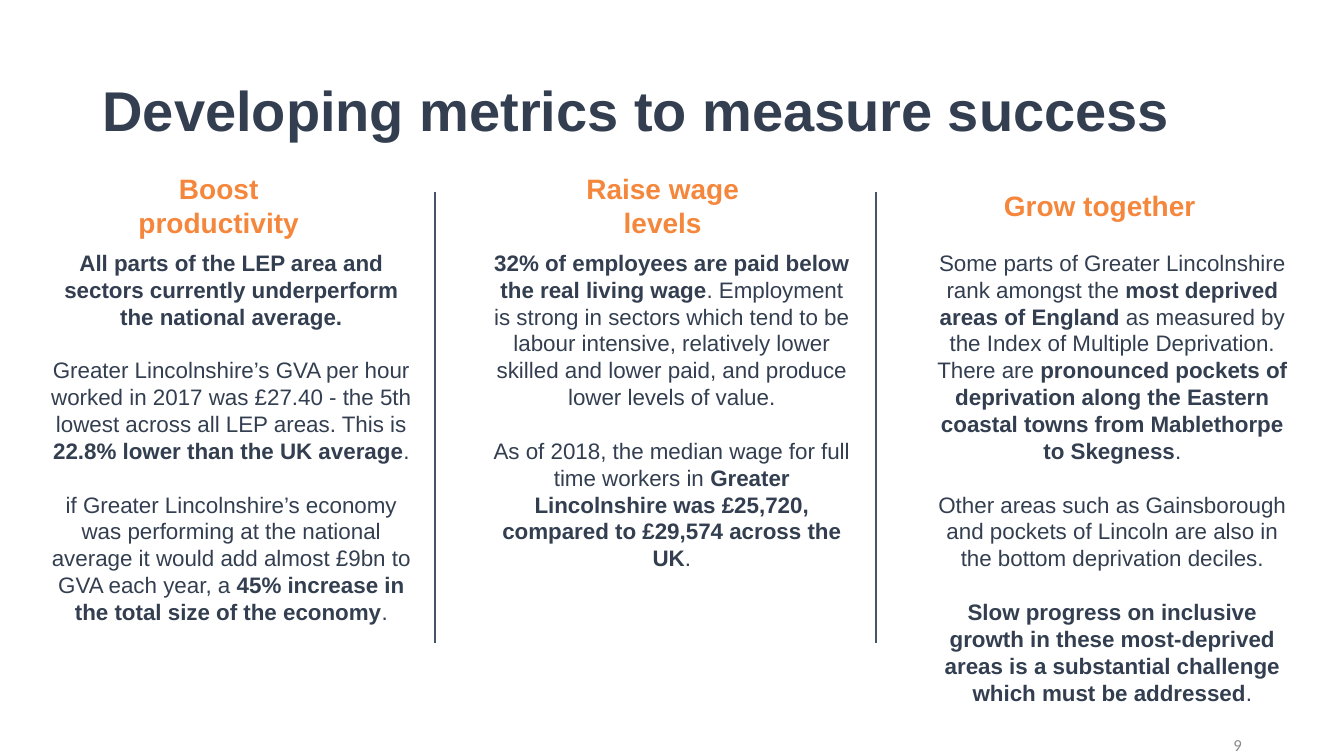
"""Build a slide with three columns of success metrics."""
from dataclasses import dataclass

from lxml import etree
from pptx import Presentation, util as u
from pptx.dml.color import RGBColor
from pptx.enum import shapes, text
from pptx.oxml import ns

NAVY = RGBColor(0x33, 0x3F, 0x50)
ORANGE = RGBColor(0xF5, 0x87, 0x3D)
SLATE = RGBColor(0x44, 0x54, 0x6A)
GREY = RGBColor(0x8C, 0x8C, 0x8C)

COLUMN_PITCH = 314.64
BODY_LEFT, BODY_TOP, BODY_WIDTH, BODY_HEIGHT = 29.52, 174.24, 271.44, 84.96
HEADING_TOP, HEADING_HEIGHT = 123.12, 47.52
DIVIDER_LEFT, DIVIDER_TOP, DIVIDER_BOTTOM = 311.04, 136.8, 459.36
BODY_LINE = 19.2


@dataclass
class Run:
    text: str
    bold: bool = False


@dataclass
class Style:
    size: float
    color: RGBColor
    name: str = "Arial"
    alignment: text.PP_ALIGN = text.PP_ALIGN.CENTER
    anchor: text.MSO_ANCHOR = text.MSO_ANCHOR.MIDDLE
    line_spacing: float | u.Length | None = None
    gap: float = 0


@dataclass
class Column:
    heading: str
    heading_left: float
    heading_width: float
    paragraphs: list[list[Run]]


TITLE = Style(40, NAVY, alignment=text.PP_ALIGN.LEFT, line_spacing=0.9)
HEADING = Style(20, ORANGE)
BODY = Style(16, NAVY, anchor=text.MSO_ANCHOR.TOP,
             line_spacing=u.Pt(BODY_LINE), gap=BODY_LINE)
NUMBER = Style(12, GREY, "Calibri", text.PP_ALIGN.RIGHT)

COLUMNS = [
    Column("Boost productivity", 77.04, 158.4, [
        [Run("All parts of the LEP area and sectors currently underperform "
             "the national average.", True)],
        [Run("Greater Lincolnshire’s GVA per hour worked in 2017 was £27.40 - "
             "the 5th lowest across all LEP areas. This is "),
         Run("22.8% lower than the UK average", True), Run(".")],
        [Run("if Greater Lincolnshire’s economy was performing at the national "
             "average it would add almost £9bn to GVA each year, a "),
         Run("45% increase in the total size of the economy", True), Run(".")],
    ]),
    Column("Raise wage levels", 385.92, 174.96, [
        [Run("32% of employees are paid below the real living wage", True),
         Run(". Employment is strong in sectors which tend to be labour "
             "intensive, relatively lower skilled and lower paid, and produce "
             "lower levels of value.")],
        [Run("As of 2018, the median wage for full time workers in "),
         Run("Greater Lincolnshire was £25,720, compared to £29,574 across "
             "the UK", True), Run(".")],
    ]),
    Column("Grow together", 706.32, 158.4, [
        [Run("Some parts of Greater Lincolnshire rank amongst the "),
         Run("most deprived areas of England ", True),
         Run("as measured by the Index of Multiple Deprivation. There are "),
         Run("pronounced pockets of deprivation along the Eastern coastal "
             "towns from Mablethorpe to Skegness", True), Run(".")],
        [Run("Other areas such as Gainsborough and pockets of Lincoln are also "
             "in the bottom deprivation deciles.")],
        [Run("Slow progress on inclusive growth in these most-deprived areas "
             "is a substantial challenge which must be addressed", True),
         Run(".")],
    ]),
]


def set_format(target: object, values: dict[str, object]) -> None:
    """Set each named attribute of the target."""
    for name, value in values.items():
        setattr(target, name, value)


def add_text(slide, left: float, top: float, width: float, height: float,
             paragraphs: list[list[Run]], style: Style) -> None:
    """Add a wrapped text box with styled paragraphs."""
    shape = slide.shapes.add_textbox(*map(u.Pt, (left, top, width, height)))
    frame = shape.text_frame
    set_format(frame, {"word_wrap": True, "vertical_anchor": style.anchor})
    for index, runs in enumerate(paragraphs):
        paragraph = frame.add_paragraph() if index else frame.paragraphs[0]
        set_format(paragraph, {"alignment": style.alignment,
                               "line_spacing": style.line_spacing})
        if index:
            paragraph.space_before = u.Pt(style.gap)
        for item in runs:
            run = paragraph.add_run()
            run.text = item.text
            set_format(run.font, {"name": style.name, "size": u.Pt(style.size),
                                  "bold": item.bold})
            run.font.color.rgb = style.color


def add_divider(slide, left: float) -> None:
    """Add a vertical rule between two columns."""
    connector = slide.shapes.add_connector(
        shapes.MSO_CONNECTOR.STRAIGHT,
        *map(u.Pt, (left, DIVIDER_BOTTOM, left, DIVIDER_TOP)))
    connector.line.color.rgb = SLATE
    connector.line.width = u.Pt(1.5)
    etree.SubElement(connector._element.spPr, ns.qn("a:effectLst"))


def main() -> None:
    """Build and save the presentation."""
    presentation = Presentation()
    set_format(presentation, {"slide_width": u.Pt(960),
                              "slide_height": u.Pt(540)})
    slide = presentation.slides.add_slide(presentation.slide_layouts[6])
    add_text(slide, 66.24, 28.8, 828, 104.4,
             [[Run("Developing metrics to measure success", True)]], TITLE)
    for index, column in enumerate(COLUMNS):
        offset = index * COLUMN_PITCH
        add_text(slide, column.heading_left, HEADING_TOP, column.heading_width,
                 HEADING_HEIGHT, [[Run(column.heading, True)]], HEADING)
        add_text(slide, BODY_LEFT + offset, BODY_TOP, BODY_WIDTH, BODY_HEIGHT,
                 column.paragraphs, BODY)
        if index < len(COLUMNS) - 1:
            add_divider(slide, DIVIDER_LEFT + offset)
    add_text(slide, 678.24, 523.44, 216, 16.56, [[Run("9")]], NUMBER)
    presentation.save("out.pptx")


if __name__ == "__main__":
    main()
